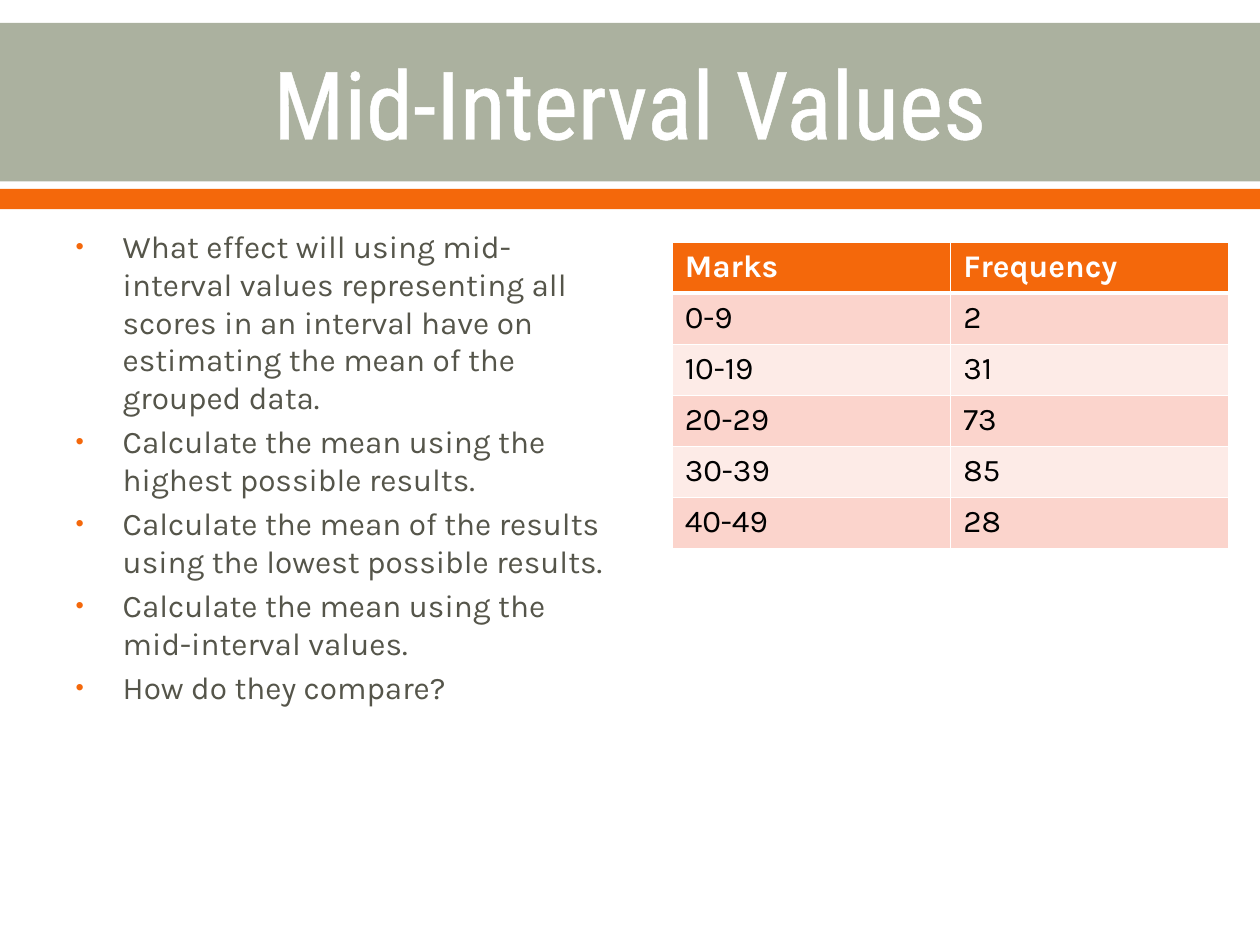
from lxml import etree
from pptx import Presentation
from pptx import util as u
from pptx.dml.color import RGBColor
from pptx.enum import shapes, text
from pptx.oxml import parse_xml
from pptx.oxml.ns import nsdecls, qn

WHITE = RGBColor(0xFF, 0xFF, 0xFF)
BLACK = RGBColor(0, 0, 0)
SAGE = RGBColor(0xAB, 0xB1, 0x9F)
ORANGE = RGBColor(0xF4, 0x68, 0x0B)
OLIVE = RGBColor(0x55, 0x55, 0x4A)
PINK = RGBColor(0xFB, 0xD4, 0xCC)
PALE_PINK = RGBColor(0xFD, 0xEB, 0xE7)

TITLE_FONT = "Roboto Condensed"
BODY_FONT = "Karla"

QUESTIONS = [
    "What effect will using mid-interval values representing all scores "
    "in an interval have on estimating the mean of the grouped data.",
    "Calculate the mean using the highest possible results.",
    "Calculate the mean of the results using the lowest possible results.",
    "Calculate the mean using the mid-interval values.",
    "How do they compare?",
]
MARKS = [
    ("Marks", "Frequency"),
    ("0-9", "2"),
    ("10-19", "31"),
    ("20-29", "73"),
    ("30-39", "85"),
    ("40-49", "28"),
]


def place(sp, left, top, width, height):
    sp.left, sp.top = u.Cm(left), u.Cm(top)
    sp.width, sp.height = u.Cm(width), u.Cm(height)


def add_run(p, words, font, size, color, bold=False):
    r = p.add_run()
    r.text = words
    r.font.name, r.font.size, r.font.bold = font, u.Pt(size), bold
    r.font.color.rgb = color
    return r


def line_xml(tag, color, width):
    return parse_xml(
        f'<a:{tag} {nsdecls("a")} w="{u.Pt(width)}"><a:solidFill>'
        f'<a:srgbClr val="{color}"/></a:solidFill></a:{tag}>')


def add_band(s, top, height, color):
    sp = s.shapes.add_shape(shapes.MSO_SHAPE.RECTANGLE,
                            0, u.Cm(top), u.Cm(25.4), u.Cm(height))
    sp.shadow.inherit = False
    sp.fill.solid()
    sp.fill.fore_color.rgb = color
    sp.line.fill.background()
    # Bands lie behind the placeholders
    s.shapes._spTree.insert(2, sp._element)


def fill_title(sp, words):
    place(sp, 1.27, 0.5, 22.86, 3.1)
    tf = sp.text_frame
    tf.auto_size = text.MSO_AUTO_SIZE.NONE
    tf.vertical_anchor = text.MSO_ANCHOR.MIDDLE
    p = tf.paragraphs[0]
    p.alignment = text.PP_ALIGN.CENTER
    r = add_run(p, words, TITLE_FONT, 54, WHITE)
    r.font._element.insert(0, line_xml("ln", WHITE, 1.1))


def format_bullet(p):
    pPr = p._p.get_or_add_pPr()
    pPr.set("marL", str(u.Cm(0.95)))
    pPr.set("indent", str(-u.Cm(0.95)))
    before = etree.SubElement(pPr, qn("a:spcBef"))
    etree.SubElement(before, qn("a:spcPct"), val="20000")
    color = etree.SubElement(pPr, qn("a:buClr"))
    etree.SubElement(color, qn("a:srgbClr"), val=str(ORANGE))
    etree.SubElement(pPr, qn("a:buSzPct"), val="75000")
    etree.SubElement(pPr, qn("a:buFont"), typeface="Arial")
    etree.SubElement(pPr, qn("a:buChar"), char="•")


def fill_list(sp, items):
    place(sp, 1.27, 4.45, 11.23, 12.57)
    tf = sp.text_frame
    tf.auto_size = text.MSO_AUTO_SIZE.NONE
    for i, item in enumerate(items):
        p = tf.add_paragraph() if i else tf.paragraphs[0]
        format_bullet(p)
        add_run(p, item, BODY_FONT, 18, OLIVE)


def format_cell(cell, words, row):
    header = row == 0
    tcPr = cell._tc.get_or_add_tcPr()
    for side in ("lnL", "lnR", "lnT", "lnB"):
        thick = (header and side == "lnB") or (row == 1 and side == "lnT")
        tcPr.append(line_xml(side, WHITE, 3 if thick else 1))
    cell.fill.solid()
    cell.fill.fore_color.rgb = ORANGE if header else (PALE_PINK, PINK)[row % 2]
    add_run(cell.text_frame.paragraphs[0], words, BODY_FONT, 18,
            WHITE if header else BLACK, header)


def add_marks_table(s, rows):
    frame = s.shapes.add_table(len(rows), len(rows[0]), u.Cm(13.55),
                               u.Cm(4.88), u.Cm(11.23), u.Cm(6.18))
    for i, row in enumerate(rows):
        for j, words in enumerate(row):
            format_cell(frame.table.cell(i, j), words, i)


def main():
    prs = Presentation()
    prs.slide_width, prs.slide_height = u.Cm(25.4), u.Cm(19.05)
    s = prs.slides.add_slide(prs.slide_layouts[1])

    # Heading bands
    add_band(s, 0.46, 3.2, SAGE)
    add_band(s, 3.81, 0.41, ORANGE)

    # Title, questions and frequency table
    fill_title(s.shapes.title, "Mid-Interval Values")
    fill_list(s.placeholders[1], QUESTIONS)
    add_marks_table(s, MARKS)

    prs.save("out.pptx")


if __name__ == "__main__":
    main()
